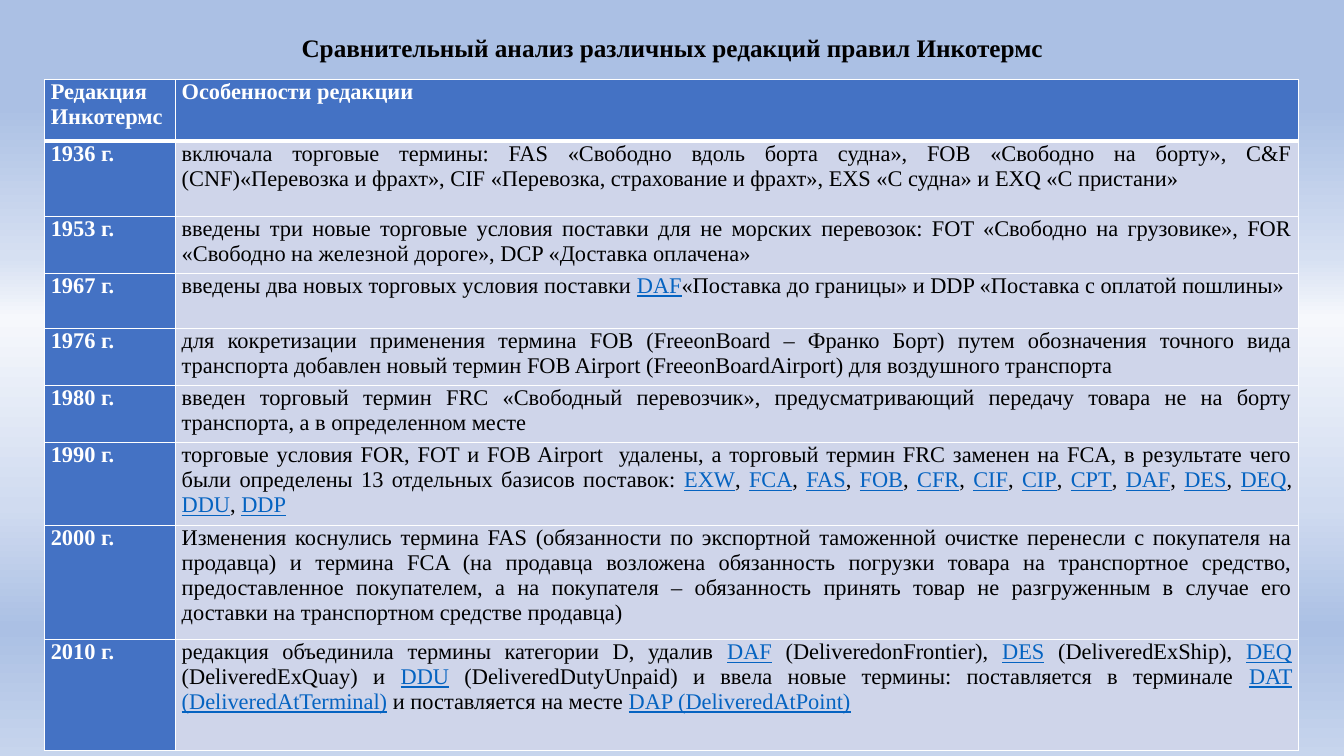
"""Build a slide with a table comparing the editions of the Incoterms rules."""
from lxml.etree import SubElement
from pptx import Presentation
from pptx.dml.color import RGBColor
from pptx.enum.text import MSO_AUTO_SIZE, PP_ALIGN as Align
from pptx.oxml.ns import qn
from pptx.util import Cm, Pt

FONT = "Times New Roman"
WHITE = RGBColor(0xFF, 0xFF, 0xFF)
BLACK = RGBColor(0x00, 0x00, 0x00)
BLUE = RGBColor(0x44, 0x72, 0xC4)
PALE = RGBColor(0xCF, 0xD5, 0xEA)
LINK = RGBColor(0x05, 0x63, 0xC1)
BACKGROUND_STOPS = [
    (14, RGBColor(0xAB, 0xC0, 0xE4)),
    (34, RGBColor(0xD6, 0xE0, 0xF2)),
    (42, RGBColor(0xF6, 0xF8, 0xFC)),
    (67, RGBColor(0xD0, 0xDB, 0xF0)),
    (83, RGBColor(0xAB, 0xC0, 0xE4)),
    (100, RGBColor(0xC7, 0xD5, 0xED)),
]
COLUMN_WIDTHS = [3.3, 28.3]
EDITIONS = [
    (1.56, "Редакция Инкотермс", "Особенности редакции"),
    (1.89, "1936 г.",
     "включала торговые термины: FAS «Свободно вдоль борта судна», FOB «Свободно на борту», "
     "C&F (CNF)«Перевозка и фрахт», CIF «Перевозка, страхование и фрахт», EXS «С судна» "
     "и EXQ «С пристани»"),
    (1.44, "1953 г.",
     "введены три новые торговые условия поставки для не морских перевозок: FOT «Свободно "
     "на грузовике», FOR «Свободно на железной дороге», DCP «Доставка оплачена»"),
    (1.39, "1967 г.",
     "введены два новых торговых условия поставки [DAF]«Поставка до границы» и DDP "
     "«Поставка с оплатой пошлины»"),
    (1.44, "1976 г.",
     "для кокретизации применения термина FOB (FreeonBoard – Франко Борт) путем обозначения "
     "точного вида транспорта добавлен новый термин FOB Airport (FreeonBoardAirport) для "
     "воздушного транспорта"),
    (1.44, "1980 г.",
     "введен торговый термин FRC «Свободный перевозчик», предусматривающий передачу товара "
     "не на борту транспорта, а в определенном месте"),
    (2.09, "1990 г.",
     "торговые условия FOR, FOT и FOB Airport  удалены, а торговый термин FRC заменен на FCA, "
     "в результате чего были определены 13 отдельных базисов поставок: [EXW], [FCA], [FAS], "
     "[FOB], [CFR], [CIF], [CIP], [CPT], [DAF], [DES], [DEQ], [DDU], [DDP]"),
    (2.87, "2000 г.",
     "Изменения коснулись термина FAS (обязанности по экспортной таможенной очистке перенесли "
     "с покупателя на продавца) и термина FCA (на продавца возложена обязанность погрузки "
     "товара на транспортное средство, предоставленное покупателем, а на покупателя – "
     "обязанность принять товар не разгруженным в случае его доставки на транспортном "
     "средстве продавца)"),
    (2.8, "2010 г.",
     "редакция объединила термины категории D, удалив [DAF] (DeliveredonFrontier), [DES] "
     "(DeliveredExShip), [DEQ] (DeliveredExQuay) и [DDU] (DeliveredDutyUnpaid) и ввела новые "
     "термины: поставляется в терминале [DAT (DeliveredAtTerminal)] и поставляется на "
     "месте [DAP (DeliveredAtPoint)]"),
]


def style_font(paragraph, size, color, bold):
    font = paragraph.font
    font.name, font.size, font.bold = FONT, Pt(size), bold
    font.color.rgb = color


def add_border(cell, side, points):
    line = SubElement(cell._tc.get_or_add_tcPr(), qn(f"a:ln{side}"), w=str(Pt(points)))
    fill = SubElement(line, qn("a:solidFill"))
    SubElement(fill, qn("a:srgbClr"), val=str(WHITE))


presentation = Presentation()
presentation.slide_width, presentation.slide_height = Cm(33.87), Cm(19.05)
slide = presentation.slides.add_slide(presentation.slide_layouts[6])

background = slide.background.fill
background.gradient()
background.gradient_angle = 270
stop_list = slide.element.find(".//" + qn("a:gsLst"))
for stop in list(stop_list):
    stop_list.remove(stop)
for percent, color in BACKGROUND_STOPS:
    stop = SubElement(stop_list, qn("a:gs"), pos=str(percent * 1000))
    SubElement(stop, qn("a:srgbClr"), val=str(color))

table = slide.shapes.add_table(
    len(EDITIONS), len(COLUMN_WIDTHS), Cm(1.12), Cm(2), Cm(31.6), Cm(16.92)).table
for column, width in zip(table.columns, COLUMN_WIDTHS):
    column.width = Cm(width)

for row_index, (height, *texts) in enumerate(EDITIONS):
    table.rows[row_index].height = Cm(height)
    for column_index, text in enumerate(texts):
        cell = table.cell(row_index, column_index)
        heading = row_index == 0 or column_index == 0
        cell.margin_left = cell.margin_right = Cm(0.16)
        cell.margin_top = cell.margin_bottom = 0
        for side in "LRTB":
            under_header = (row_index, side) in [(0, "B"), (1, "T")]
            add_border(cell, side, 3 if under_header else 1)
        cell.fill.solid()
        cell.fill.fore_color.rgb = BLUE if heading else PALE

        paragraph = cell.text_frame.paragraphs[0]
        paragraph.alignment = Align.JUSTIFY
        style_font(paragraph, 16, WHITE if heading else BLACK, heading)
        for part_index, part in enumerate(text.replace("]", "[").split("[")):
            if not part:
                continue
            run = paragraph.add_run()
            run.text = part
            run.font.name, run.font.size, run.font.bold = FONT, Pt(16), heading
            run.font.color.rgb = WHITE if heading else BLACK
            if part_index % 2:
                run.font.color.rgb = LINK
                run.font.underline = True

title = slide.shapes.add_textbox(Cm(4.83), Cm(0.69), Cm(24.23), Cm(1.02))
title.text_frame.word_wrap = True
title.text_frame.auto_size = MSO_AUTO_SIZE.SHAPE_TO_FIT_TEXT
paragraph = title.text_frame.paragraphs[0]
paragraph.text = "Сравнительный анализ различных редакций правил Инкотермс"
paragraph.alignment = Align.CENTER
style_font(paragraph, 18, BLACK, True)

presentation.save("out.pptx")
